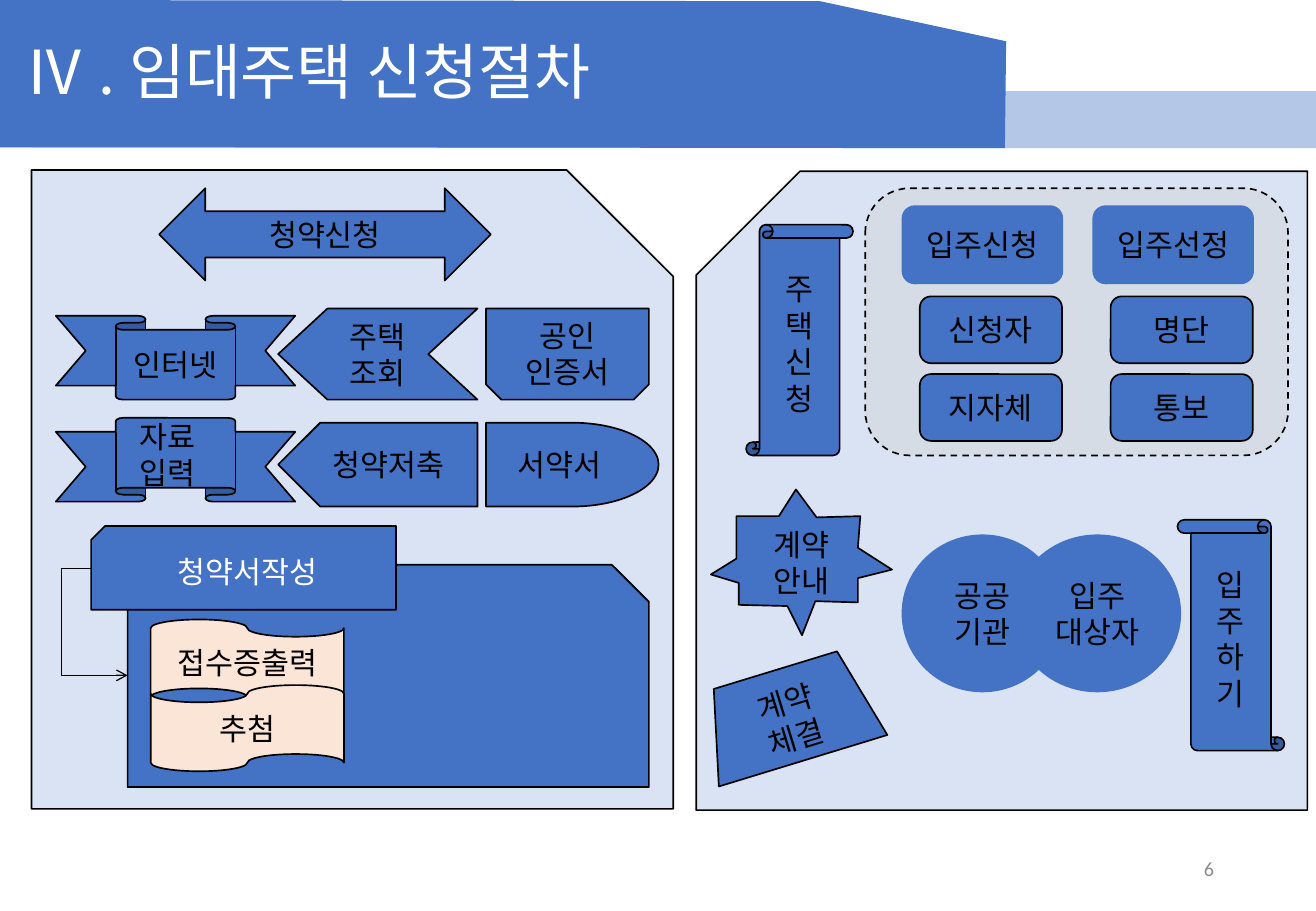
from dataclasses import dataclass

from lxml import etree
from pptx import Presentation
from pptx.dml.color import RGBColor
from pptx.enum.dml import MSO_LINE
from pptx.enum.shapes import MSO_CONNECTOR, MSO_SHAPE
from pptx.enum.text import MSO_ANCHOR, MSO_AUTO_SIZE, PP_ALIGN
from pptx.oxml.ns import qn
from pptx.util import Inches, Pt

RECTANGLE, ROUNDED, OVAL = MSO_SHAPE.RECTANGLE, MSO_SHAPE.ROUNDED_RECTANGLE, MSO_SHAPE.OVAL
SNIP_ONE, SNIP_TWO = MSO_SHAPE.SNIP_1_RECTANGLE, MSO_SHAPE.SNIP_2_SAME_RECTANGLE
DOUBLE_ARROW, RIBBON, CHEVRON = MSO_SHAPE.LEFT_RIGHT_ARROW, MSO_SHAPE.DOWN_RIBBON, MSO_SHAPE.CHEVRON
HOME_PLATE, DELAY, TAPE = MSO_SHAPE.PENTAGON, MSO_SHAPE.FLOWCHART_DELAY, MSO_SHAPE.FLOWCHART_PUNCHED_TAPE
SCROLL, TRAPEZOID = MSO_SHAPE.VERTICAL_SCROLL, MSO_SHAPE.TRAPEZOID
ELBOW, DASH = MSO_CONNECTOR.ELBOW, MSO_LINE.DASH
LEFT, CENTER, RIGHT = PP_ALIGN.LEFT, PP_ALIGN.CENTER, PP_ALIGN.RIGHT
TOP, MIDDLE, BOTTOM = MSO_ANCHOR.TOP, MSO_ANCHOR.MIDDLE, MSO_ANCHOR.BOTTOM
NO_AUTOFIT = MSO_AUTO_SIZE.NONE


@dataclass(frozen=True)
class Theme:
    blue: str = "4472C4"
    light_blue: str = "B4C7E7"
    panel: str = "DAE3F3"
    gray: str = "D6DCE5"
    peach: str = "FBE5D6"
    black: str = "000000"
    white: str = "FFFFFF"
    page: str = "8C8C8C"
    font: str = "Noto Sans CJK KR"
    page_font: str = "Calibri"
    title_size: int = 36
    body_size: int = 18
    page_size: int = 12


THEME = Theme()


@dataclass(frozen=True)
class Box:
    left: float
    top: float
    width: float
    height: float

    def inner(self, left, top, width, height):
        return Box(self.left + left, self.top + top, width, height)

    def point(self, x, y):
        return Inches(self.left + x), Inches(self.top + y)

    def lengths(self):
        return [Inches(value) for value in (self.left, self.top, self.width, self.height)]


def rgb(color):
    return RGBColor.from_string(color)


def write(shape, lines, color=THEME.black, size=THEME.body_size, font=THEME.font,
          align=CENTER, anchor=MIDDLE):
    frame = shape.text_frame
    frame.word_wrap = True
    frame.auto_size = NO_AUTOFIT
    frame.vertical_anchor = anchor
    for index, line in enumerate(lines):
        paragraph = frame.add_paragraph() if index else frame.paragraphs[0]
        paragraph.alignment = align
        run = paragraph.add_run()
        run.text = line
        run.font.size = Pt(size)
        run.font.color.rgb = rgb(color)
        run.font.name = font
        etree.SubElement(run.font._element, qn("a:ea")).set("typeface", font)


def paint(shape, fill, outlined):
    shape.shadow.inherit = False
    shape.fill.solid()
    shape.fill.fore_color.rgb = rgb(fill)
    if outlined:
        shape.line.color.rgb = rgb(THEME.black)
        shape.line.width = Pt(1)
    else:
        shape.line.fill.background()


def add_block(slide, kind, box, *lines, fill=THEME.blue, outlined=True, flip=None,
              adjust=None, color=THEME.black):
    shape = slide.shapes.add_shape(kind, *box.lengths())
    paint(shape, fill, outlined)
    if flip:
        shape.element.spPr.find(qn("a:xfrm")).set(flip, "1")
    if adjust is not None:
        shape.adjustments[0] = adjust
    write(shape, lines, color)
    return shape


def add_outline(slide, box, points, outlined):
    corners = [box.point(x, y) for x, y in points]
    builder = slide.shapes.build_freeform(*corners[0])
    builder.add_line_segments(corners[1:], close=True)
    shape = builder.convert_to_shape()
    paint(shape, THEME.blue, outlined)
    return shape


def add_label(slide, box, lines, **style):
    write(slide.shapes.add_textbox(*box.lengths()), lines, **style)


def add_elbow_arrow(slide, start, end, bend):
    connector = slide.shapes.add_connector(ELBOW, *start, *end)
    connector.line.color.rgb = rgb(THEME.black)
    connector.line.width = Pt(0.75)
    properties = connector.element.spPr
    etree.SubElement(properties.find(qn("a:ln")), qn("a:tailEnd")).set("type", "arrow")
    etree.SubElement(properties, qn("a:effectLst"))
    guides = properties.find(qn("a:prstGeom")).get_or_add_avLst()
    guide = etree.SubElement(guides, qn("a:gd"))
    guide.set("name", "adj1")
    guide.set("fmla", f"val {round(bend * 100000)}")


def add_header(slide, box):
    add_block(slide, RECTANGLE, box.inner(0, 0.75, box.width, 0.47),
              fill=THEME.light_blue, outlined=False)
    add_outline(slide, box, [(-0.01, 0), (6.75, 0.01), (8.28, 0.34),
                             (8.27, 1.22), (-0.03, 1.21)], False)
    title = slide.shapes.title
    slide.shapes.element.append(title.element)
    title.left, title.top, title.width, title.height = box.inner(0.1, 0.25, 9.34, 0.69).lengths()
    write(title, ["Ⅳ . 임대주택 신청절차"], THEME.white, THEME.title_size,
          align=LEFT, anchor=BOTTOM)
    title.text_frame.paragraphs[0].line_spacing = 0.9


def add_application_panel(slide, box):
    add_block(slide, SNIP_ONE, box, fill=THEME.panel)
    add_block(slide, DOUBLE_ARROW, box.inner(1.05, 0.15, 2.73, 0.76), "청약신청")
    add_block(slide, RIBBON, box.inner(0.2, 1.2, 1.97, 0.69), "인터넷")
    add_block(slide, RIBBON, box.inner(0.2, 2.04, 1.97, 0.69), flip="flipV")
    add_label(slide, box.inner(0.79, 1.99, 0.8, 0.71), ["자료", "입력"], align=LEFT, anchor=TOP)
    add_block(slide, CHEVRON, box.inner(2.03, 1.14, 1.64, 0.75), "주택", "조회",
              flip="flipH", adjust=0.54)
    add_block(slide, SNIP_TWO, box.inner(3.74, 1.14, 1.34, 0.75), flip="flipV")
    add_label(slide, box.inner(3.67, 1.16, 1.48, 0.71), ["공인", "인증서"], anchor=TOP)
    add_block(slide, HOME_PLATE, box.inner(2.03, 2.08, 1.64, 0.69), "청약저축", flip="flipH")
    add_block(slide, DELAY, box.inner(3.74, 2.08, 1.42, 0.69), "서약서")
    add_block(slide, SNIP_TWO, box.inner(0.79, 3.25, 4.29, 1.83))
    add_elbow_arrow(slide, box.point(0.49, 3.28), box.point(0.79, 4.16), -0.82)
    add_block(slide, SNIP_ONE, box.inner(0.49, 2.93, 2.51, 0.69), "청약서작성",
              flip="flipH", color=THEME.white)
    for top, text, flip in ((3.7, "접수증출력", "flipH"), (4.24, "추첨", None)):
        add_block(slide, TAPE, box.inner(0.98, top, 1.59, 0.71), text,
                  fill=THEME.peach, flip=flip)


def add_selection_group(slide, box):
    frame = add_block(slide, ROUNDED, box, fill=THEME.gray)
    frame.line.dash_style = DASH
    columns = (("입주신청", "신청자", "지자체"), ("입주선정", "명단", "통보"))
    for column, (heading, *details) in enumerate(columns):
        left = 0.3 + column * 1.57
        add_block(slide, ROUNDED, box.inner(left, 0.14, 1.33, 0.65), heading, outlined=False)
        for row, detail in enumerate(details):
            add_block(slide, ROUNDED, box.inner(left + 0.15, 0.89 + row * 0.64, 1.17, 0.55), detail)


def add_contract_panel(slide, box):
    add_block(slide, SNIP_ONE, box, fill=THEME.panel, flip="flipH", adjust=0.17)
    add_block(slide, SCROLL, box.inner(0.41, 0.44, 0.88, 1.9), *"주택신청")
    add_selection_group(slide, box.inner(1.39, 0.14, 3.48, 2.2))
    contract = add_block(slide, TRAPEZOID, box.inner(0.04, 4.09, 1.45, 0.78), "계약", "체결")
    contract.rotation = 343
    star = add_outline(slide, box.inner(0.12, 2.62, 1.49, 1.2), [
        (0.21, 0.22), (0.56, 0.22), (0.7, 0), (0.87, 0.23), (1.23, 0.22), (1.21, 0.48),
        (1.49, 0.66), (1.21, 0.73), (1.21, 0.93), (0.86, 0.92), (0.75, 1.2), (0.63, 0.96),
        (0.23, 0.95), (0.23, 0.77), (0, 0.7), (0.21, 0.57)], True)
    write(star, ["계약", "안내"])
    for left, width, lines in ((1.69, 1.33, ("공공", "기관")), (2.61, 1.38, ("입주", "대상자"))):
        add_block(slide, OVAL, box.inner(left, 2.99, width, 1.3), *lines, outlined=False)
    add_block(slide, SCROLL, box.inner(3.96, 2.87, 0.88, 1.9), *"입주하기", flip="flipH")


def main():
    presentation = Presentation()
    presentation.slide_width, presentation.slide_height = Inches(10.83), Inches(7.5)
    slide = presentation.slides.add_slide(presentation.slide_layouts[5])
    add_header(slide, Box(0, 0, 10.83, 1.22))
    add_application_panel(slide, Box(0.26, 1.4, 5.28, 5.26))
    add_contract_panel(slide, Box(5.73, 1.41, 5.03, 5.26))
    add_label(slide, Box(7.65, 6.95, 2.44, 0.4), ["6"], color=THEME.page,
              size=THEME.page_size, font=THEME.page_font, align=RIGHT)
    presentation.save("out.pptx")


if __name__ == "__main__":
    main()
